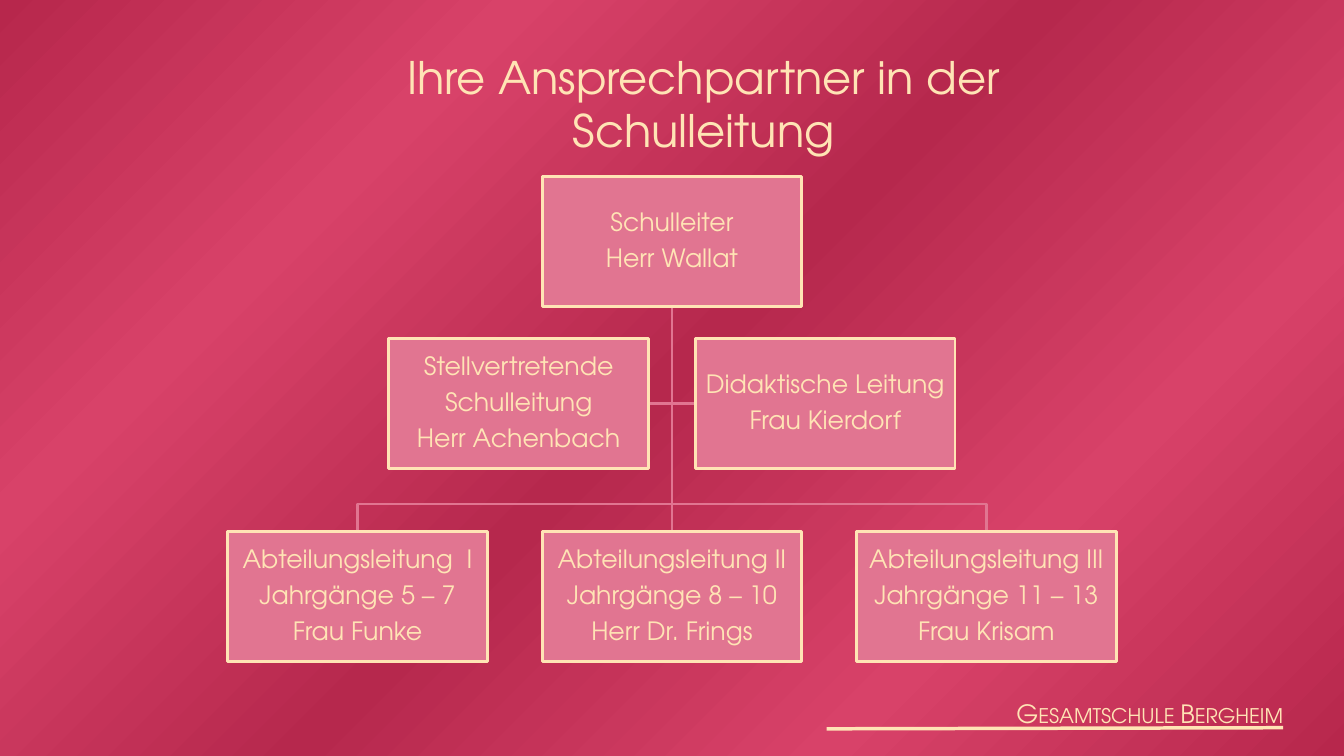
import copy
import pptx
import pptx.dml.color
import pptx.enum.shapes
import pptx.enum.text
import pptx.oxml.ns
import pptx.oxml.xmlchemy
import pptx.util

Pt = pptx.util.Pt
ALIGN = pptx.enum.text.PP_ALIGN
CREAM, PINK = "FFE4B5", "E17591"
FONT = "TeX Gyre Adventor"


def color(code):
    return pptx.dml.color.RGBColor.from_string(code)


def write(box, text, size=18, align=ALIGN.CENTER, line_spacing=1.0, space_after=0,
          anchor=pptx.enum.text.MSO_ANCHOR.TOP, insets=(7.2, 3.6, 7.2, 3.6), grow=False):
    frame = box.text_frame
    frame.word_wrap = True
    frame.vertical_anchor = anchor
    frame.margin_left, frame.margin_top, frame.margin_right, frame.margin_bottom = map(Pt, insets)
    if grow:
        frame.auto_size = pptx.enum.text.MSO_AUTO_SIZE.SHAPE_TO_FIT_TEXT
    for index, content in enumerate(text.split("\n")):
        para = frame.add_paragraph() if index else frame.paragraphs[0]
        para.alignment = align
        para.line_spacing = line_spacing
        para.space_after = Pt(space_after)
        span = para.add_run()
        span.text = content
        span.font.name = FONT
        span.font.size = Pt(size)
        span.font.color.rgb = color(CREAM)


deck = pptx.Presentation()
deck.slide_width, deck.slide_height = Pt(960), Pt(540)
page = deck.slides.add_slide(deck.slide_layouts[6])

background = page.background.fill
background.gradient()
background.gradient_angle = 315
stop_list = page.element.find(".//" + pptx.oxml.ns.qn("a:gsLst"))
for extra in range(3):
    stop_list.append(copy.deepcopy(stop_list[0]))
stop_colors = ["B7274C", "D84269", "B6284D", "D84269", "B7274C"]
for index, stop in enumerate(background.gradient_stops):
    stop.position = index / 4
    stop.color.rgb = color(stop_colors[index])

BOX_WIDTH, BOX_HEIGHT = 185.5, 93
CENTER, BRANCH_STEP, DEPUTY_OFFSET = 480, 224.6, 109.5
HEAD_TOP, DEPUTY_TOP, BRANCH_TOP, BRANCH_BAR = 126, 241.8, 379.5, 360
HEAD_BOTTOM = HEAD_TOP + BOX_HEIGHT
DEPUTY_MIDDLE = DEPUTY_TOP + BOX_HEIGHT / 2
DEPUTY_GAP = DEPUTY_OFFSET - BOX_WIDTH / 2

lines = {
    "footer": (590.4, 520.6, 916.6, 519.8, CREAM, 2.5),
    "trunk": (CENTER, HEAD_BOTTOM, CENTER, BRANCH_TOP, PINK, 2),
    "deputies": (CENTER - DEPUTY_GAP, DEPUTY_MIDDLE, CENTER + DEPUTY_GAP, DEPUTY_MIDDLE, PINK, 2),
}
connectors = {}
for name, (x1, y1, x2, y2, code, width) in lines.items():
    line = page.shapes.add_connector(
        pptx.enum.shapes.MSO_CONNECTOR.STRAIGHT, Pt(x1), Pt(y1), Pt(x2), Pt(y2))
    line.line.color.rgb = color(code)
    line.line.width = Pt(width)
    line.element.spPr.append(pptx.oxml.xmlchemy.OxmlElement("a:effectLst"))
    connectors[name] = line

for side in (-1, 1):
    branch_x = CENTER + side * BRANCH_STEP
    builder = page.shapes.build_freeform(Pt(CENTER), Pt(HEAD_BOTTOM))
    builder.add_line_segments(
        [(Pt(CENTER), Pt(BRANCH_BAR)), (Pt(branch_x), Pt(BRANCH_BAR)), (Pt(branch_x), Pt(BRANCH_TOP))],
        close=False)
    elbow = builder.convert_to_shape()
    elbow.shadow.inherit = False
    elbow.fill.background()
    elbow.line.color.rgb = color(PINK)
    elbow.line.width = Pt(2)

people = [
    (CENTER, HEAD_TOP, "Schulleiter\nHerr Wallat"),
    (CENTER - DEPUTY_OFFSET, DEPUTY_TOP, "Stellvertretende\nSchulleitung\nHerr Achenbach"),
    (CENTER + DEPUTY_OFFSET, DEPUTY_TOP, "Didaktische Leitung\nFrau Kierdorf"),
    (CENTER - BRANCH_STEP, BRANCH_TOP, "Abteilungsleitung  I\nJahrgänge 5 – 7\nFrau Funke"),
    (CENTER, BRANCH_TOP, "Abteilungsleitung II\nJahrgänge 8 – 10\nHerr Dr. Frings"),
    (CENTER + BRANCH_STEP, BRANCH_TOP, "Abteilungsleitung III\nJahrgänge 11 – 13\nFrau Krisam"),
]
boxes = []
for middle, top, text in people:
    box = page.shapes.add_shape(
        pptx.enum.shapes.MSO_SHAPE.RECTANGLE,
        Pt(middle - BOX_WIDTH / 2), Pt(top), Pt(BOX_WIDTH), Pt(BOX_HEIGHT))
    box.shadow.inherit = False
    box.fill.solid()
    box.fill.fore_color.rgb = color(PINK)
    box.line.color.rgb = color(CREAM)
    box.line.width = Pt(2)
    write(box, text, line_spacing=0.9, space_after=6.3,
          anchor=pptx.enum.text.MSO_ANCHOR.MIDDLE, insets=(0.7, 0.7, 0.7, 0.7))
    boxes.append(box)

head, deputy, didactics, first_branch, second_branch, third_branch = boxes
connectors["trunk"].begin_connect(head, 2)
connectors["trunk"].end_connect(second_branch, 0)
connectors["deputies"].begin_connect(deputy, 3)
connectors["deputies"].end_connect(didactics, 1)

title = page.shapes.add_textbox(Pt(201), Pt(31.7), Pt(603.4), Pt(46))
write(title, "Ihre Ansprechpartner in der Schulleitung", size=32, grow=True)

footer = page.shapes.add_textbox(Pt(618.5), Pt(495.4), Pt(298), Pt(29))
write(footer, "Gesamtschule Bergheim", align=ALIGN.RIGHT, insets=(7.2, 3.6, 0, 3.6), grow=True)
for properties in footer.element.iter(pptx.oxml.ns.qn("a:rPr")):
    properties.set("cap", "small")

deck.save("out.pptx")
